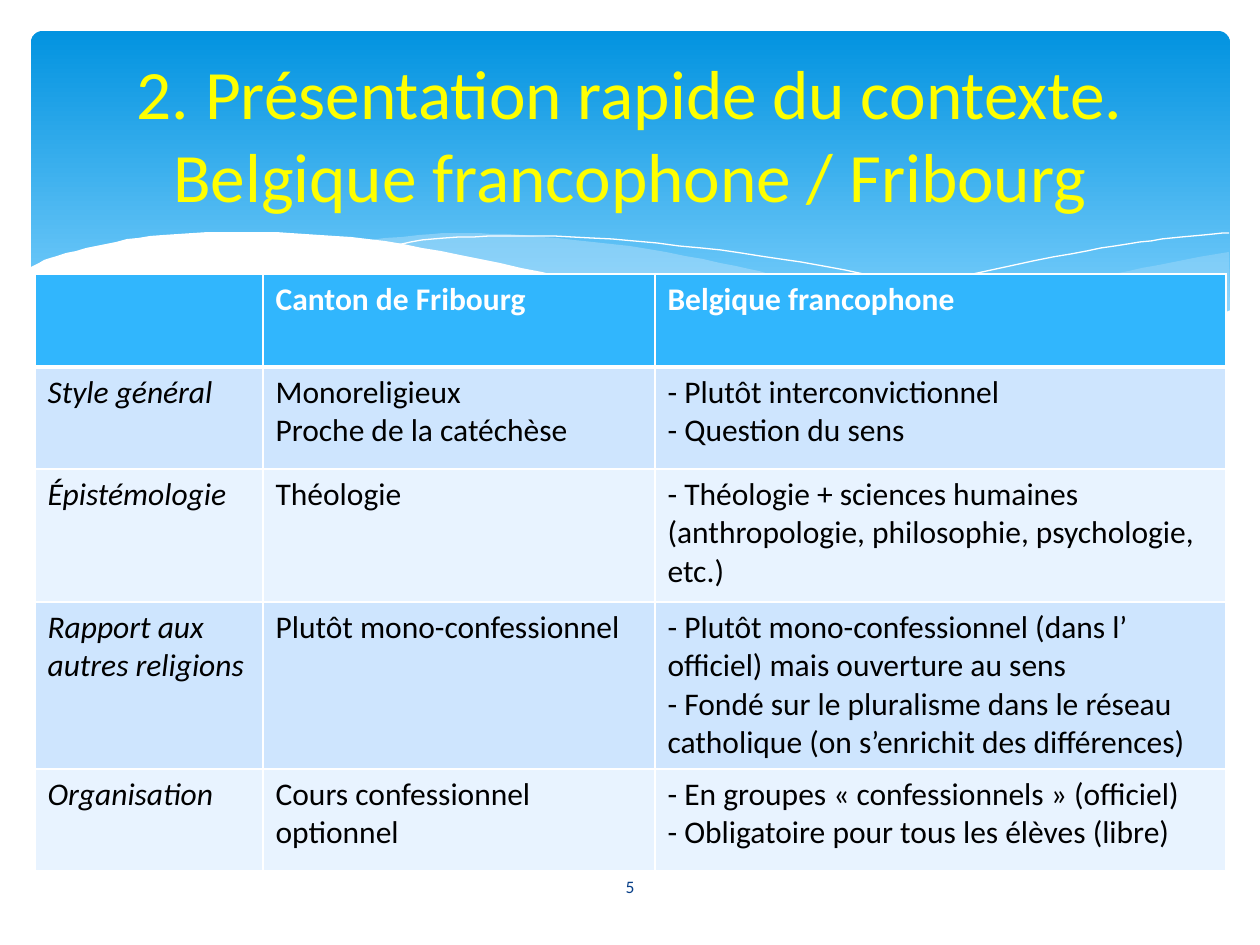
from lxml.etree import SubElement
from pptx import Presentation
from pptx.dml.color import RGBColor
from pptx.enum.shapes import MSO_SHAPE
from pptx.enum.text import MSO_ANCHOR, MSO_AUTO_SIZE, PP_ALIGN
from pptx.oxml.ns import qn
from pptx.util import Emu, Pt

SCALE = 914400 / 126
FONT = "Calibri"
COLORS = {
    "banner_top": "0293E0", "banner_bottom": "83D3FE", "wave": "C6E7FC",
    "white": "FFFFFF", "black": "000000", "title": "FFFF00", "number": "073E87",
    "header": "31B6FD", "odd_row": "CEE5FE", "even_row": "E8F3FF",
}

# Wave outlines, measured from the banner's top left corner
RIGHT_WAVE = [(1198, 221), (1111, 237), (1054, 250), (951, 274), (859, 293), (802, 303),
              (875, 312), (953, 318), (1021, 318), (1089, 312), (1147, 299), (1199, 280)]
MIDDLE_WAVE = [(329, 210), (402, 203), (448, 202), (526, 207), (617, 218), (705, 235),
               (762, 249), (859, 271), (945, 289), (1024, 303), (1094, 313), (1025, 319),
               (943, 318), (862, 312), (768, 298), (637, 271), (535, 249), (452, 230),
               (376, 216), (329, 210)]
LEFT_LINE = [(358, 215), (402, 208), (474, 205), (560, 207), (670, 217), (770, 231),
             (885, 254), (1016, 285), (1112, 312)]
RIGHT_LINE = [(741, 293), (816, 273), (911, 250), (1022, 226), (1097, 213), (1151, 206),
              (1198, 202)]
WHITE_WAVE = [(-2, 237), (19, 227), (65, 215), (119, 205), (192, 201), (259, 202),
              (337, 208), (429, 224), (532, 246), (636, 270), (729, 289), (836, 307),
              (928, 316), (1006, 318), (1072, 313), (1128, 303), (1166, 292), (1200, 279)]
WHITE_CORNERS = [(1200, 384), (-2, 384)]

COLUMN_WIDTHS = [228, 392, 571]
ROW_HEIGHTS = [93, 102, 133, 167, 102]
ROWS = [
    ["", "Canton de Fribourg", "Belgique francophone"],
    ["Style général", "Monoreligieux\nProche de la catéchèse",
     "- Plutôt interconvictionnel\n- Question du sens"],
    ["Épistémologie", "Théologie",
     "- Théologie + sciences humaines (anthropologie, philosophie, psychologie, etc.)"],
    ["Rapport aux autres religions", "Plutôt mono-confessionnel",
     "- Plutôt mono-confessionnel (dans l’ officiel) mais ouverture au sens\n"
     "- Fondé sur le pluralisme dans le réseau catholique (on s’enrichit des différences)"],
    ["Organisation", "Cours confessionnel optionnel",
     "- En groupes « confessionnels » (officiel)\n"
     "- Obligatoire pour tous les élèves (libre)"],
]


def px(value):
    return Emu(round(value * SCALE))


def color(name):
    return RGBColor.from_string(COLORS[name])


def write(text_frame, text, size=18, fill="black", bold=False, italic=False,
          align=PP_ALIGN.LEFT, anchor=None):
    """Fill a text frame; a newline starts a paragraph, a vertical tab a line."""
    text_frame.word_wrap = True
    if anchor is not None:
        text_frame.vertical_anchor = anchor
    text_frame.text = text
    for paragraph in text_frame.paragraphs:
        paragraph.alignment = align
        for run in paragraph.runs:
            font = run.font
            font.name, font.size = FONT, Pt(size)
            font.bold, font.italic = bold, italic
            font.color.rgb = color(fill)


def smooth_curve(points, steps=5):
    """Catmull-Rom curve through the points."""
    padded = [points[0], *points, points[-1]]
    curve = [points[0]]
    for a, b, c, d in zip(padded, padded[1:], padded[2:], padded[3:]):
        for step in range(1, steps + 1):
            t = step / steps
            curve.append(tuple(
                (2 * q + (r - p) * t + (2 * p - 5 * q + 4 * r - s) * t ** 2
                 + (3 * q - p - 3 * r + s) * t ** 3) / 2
                for p, q, r, s in zip(a, b, c, d)))
    return curve


def add_wave(slide, left, top, points, corners=(), fill=None, alpha=None):
    """Draw a filled wave, or a white hairline when no fill is given."""
    outline = [(left + x, top + y) for x, y in [*smooth_curve(points), *corners]]
    builder = slide.shapes.build_freeform(*outline[0], scale=SCALE)
    builder.add_line_segments(outline[1:], close=fill is not None)
    shape = builder.convert_to_shape()
    shape.shadow.inherit = False
    if fill is None:
        shape.fill.background()
        shape.line.color.rgb = color("white")
        shape.line.width = Pt(0)
        return
    shape.line.fill.background()
    shape.fill.solid()
    shape.fill.fore_color.rgb = color(fill)
    if alpha is not None:
        rgb = shape.fill._xPr.find(".//" + qn("a:srgbClr"))
        SubElement(rgb, qn("a:alpha"), val=str(alpha * 1000))


def add_banner(slide, left, top, width, height):
    banner = slide.shapes.add_shape(MSO_SHAPE.ROUNDED_RECTANGLE,
                                    px(left), px(top), px(width), px(height))
    banner.adjustments[0] = 0.034
    banner.shadow.inherit = False
    banner.line.fill.background()
    banner.fill.gradient()
    banner.fill.gradient_angle = 270
    stops = zip(banner.fill.gradient_stops, (0, 0.9), ("banner_top", "banner_bottom"))
    for stop, position, name in stops:
        stop.position = position
        stop.color.rgb = color(name)

    add_wave(slide, left, top, RIGHT_WAVE, fill="wave", alpha=29)
    add_wave(slide, left, top, MIDDLE_WAVE, fill="wave", alpha=40)
    add_wave(slide, left, top, LEFT_LINE)
    add_wave(slide, left, top, RIGHT_LINE)
    add_wave(slide, left, top, WHITE_WAVE, WHITE_CORNERS, fill="white")


def place_title(slide, left, top, width, height):
    title = slide.shapes.title
    title.left, title.top, title.width, title.height = map(px, (left, top, width, height))
    title.text_frame.auto_size = MSO_AUTO_SIZE.NONE
    write(title.text_frame,
          "2. Présentation rapide du contexte.\vBelgique francophone / Fribourg",
          size=39.6, fill="title", align=PP_ALIGN.CENTER, anchor=MSO_ANCHOR.MIDDLE)
    slide.shapes._spTree.append(title._element)  # in front of the banner


def set_borders(cell, **widths):
    properties = cell._tc.get_or_add_tcPr()
    for side in "LRTB":
        line = SubElement(properties, qn("a:ln" + side), w=str(Pt(widths.get(side, 1))))
        fill = SubElement(line, qn("a:solidFill"))
        SubElement(fill, qn("a:srgbClr"), val=COLORS["white"])


def add_comparison(slide, left, top):
    frame = slide.shapes.add_table(len(ROWS), len(COLUMN_WIDTHS), px(left), px(top),
                                   px(sum(COLUMN_WIDTHS)), px(sum(ROW_HEIGHTS)))
    table = frame.table
    for column, width in zip(table.columns, COLUMN_WIDTHS):
        column.width = px(width)
    for r, (texts, height) in enumerate(zip(ROWS, ROW_HEIGHTS)):
        table.rows[r].height = px(height)
        header = r == 0
        background = "header" if header else "odd_row" if r % 2 else "even_row"
        for c, text in enumerate(texts):
            cell = table.cell(r, c)
            set_borders(cell, B=3 if header else 1, T=3 if r == 1 else 1)
            cell.fill.solid()
            cell.fill.fore_color.rgb = color(background)
            write(cell.text_frame, text, fill="white" if header else "black",
                  bold=header, italic=not header and c == 0)


def add_page_number(slide, left, top, width, height):
    box = slide.shapes.add_textbox(px(left), px(top), px(width), px(height))
    write(box.text_frame, "5", size=10, fill="number",
          align=PP_ALIGN.CENTER, anchor=MSO_ANCHOR.MIDDLE)


def main():
    presentation = Presentation()
    presentation.slide_width, presentation.slide_height = px(1260), px(945)
    slide = presentation.slides.add_slide(presentation.slide_layouts[5])
    add_banner(slide, 31, 31, 1199, 341)
    add_comparison(slide, 35, 274)
    add_page_number(slide, 550, 862, 160, 50)
    place_title(slide, 63, 47, 1134, 172)
    presentation.save("out.pptx")


if __name__ == "__main__":
    main()
